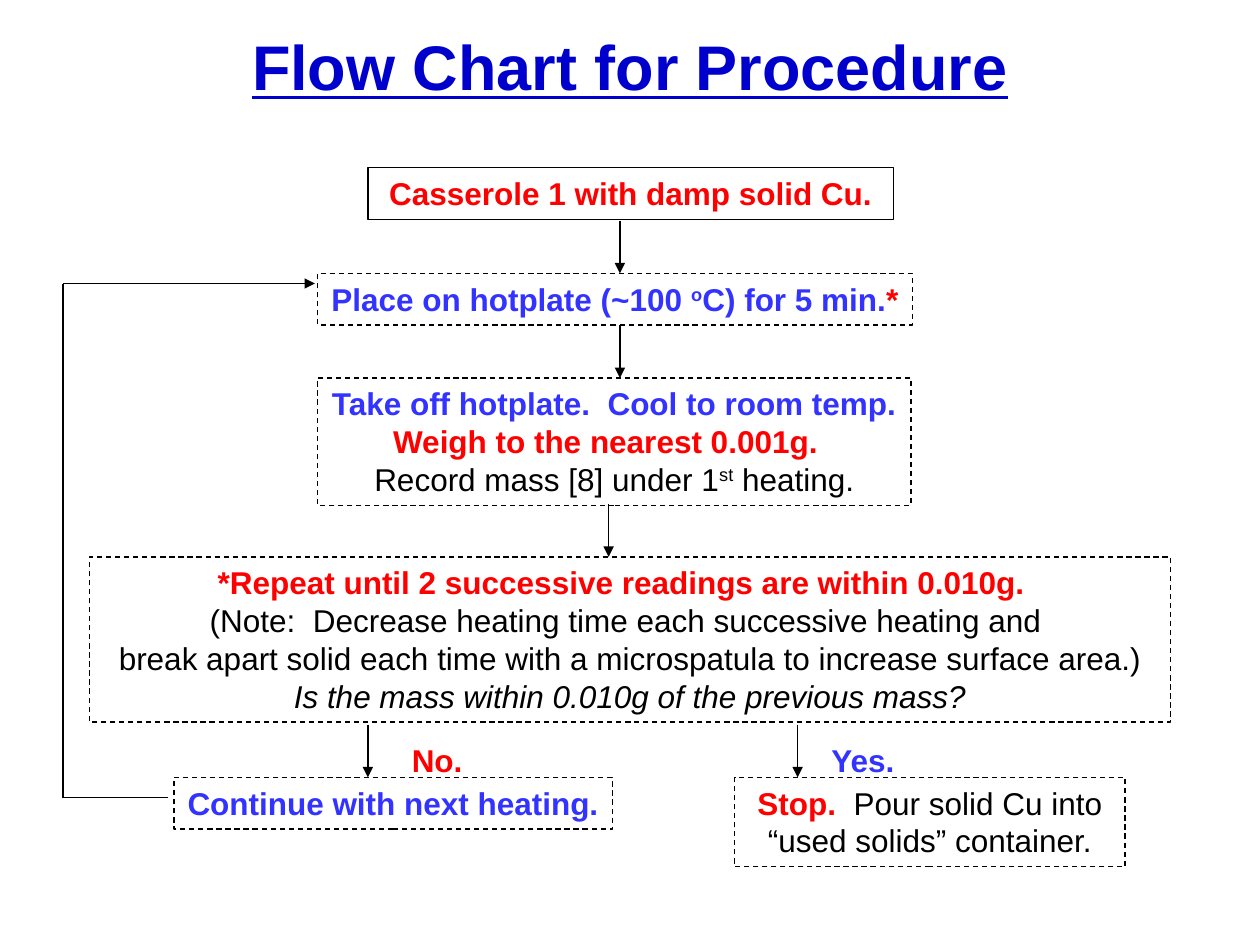
from lxml.etree import SubElement
from pptx import Presentation
from pptx.dml.color import RGBColor
from pptx.enum.dml import MSO_LINE
from pptx.enum.shapes import MSO_CONNECTOR, MSO_SHAPE
from pptx.enum.text import MSO_ANCHOR, MSO_AUTO_SIZE, PP_ALIGN
from pptx.oxml.ns import qn
from pptx.util import Inches, Pt

BLACK = RGBColor(0, 0, 0)
RED = RGBColor(0xFF, 0, 0)
BLUE = RGBColor(0x33, 0x33, 0xFF)
TITLE_BLUE = RGBColor(0, 0, 0xCC)


def add_run(paragraph, text, color=BLACK, size=18, bold=False, italic=False,
            underline=False, superscript=False):
    run = paragraph.add_run()
    run.text = text
    font = run.font
    font.name = "Arial"
    font.size = Pt(size)
    font.bold = bold
    font.italic = italic
    font.underline = underline
    font.color.rgb = color
    if superscript:
        run._r.get_or_add_rPr().set("baseline", "30000")


def plain(text, **style):
    return text, style


def strong(text, color, **style):
    return text, dict(color=color, bold=True, **style)


class FlowChart:
    line_width = Pt(0.75)
    line_color = BLACK

    def __init__(self, slide):
        self.slide = slide

    def fill_text(self, shape, paragraphs, alignment, wrap):
        frame = shape.text_frame
        frame.word_wrap = wrap
        frame.auto_size = MSO_AUTO_SIZE.SHAPE_TO_FIT_TEXT
        frame.vertical_anchor = MSO_ANCHOR.TOP
        for index, runs in enumerate(paragraphs):
            paragraph = frame.add_paragraph() if index else frame.paragraphs[0]
            paragraph.alignment = alignment
            for text, style in runs:
                add_run(paragraph, text, **style)

    def style_line(self, line):
        line.color.rgb = self.line_color
        line.width = self.line_width

    def box(self, left, top, width, height, *paragraphs, dashed=True, wrap=True):
        shape = self.slide.shapes.add_shape(
            MSO_SHAPE.RECTANGLE, Inches(left), Inches(top), Inches(width), Inches(height))
        shape.shadow.inherit = False
        shape.fill.background()
        self.style_line(shape.line)
        if dashed:
            shape.line.dash_style = MSO_LINE.DASH
        self.fill_text(shape, paragraphs, PP_ALIGN.CENTER, wrap)

    def label(self, left, top, width, height, run, alignment=PP_ALIGN.LEFT, wrap=True):
        shape = self.slide.shapes.add_textbox(
            Inches(left), Inches(top), Inches(width), Inches(height))
        self.fill_text(shape, [[run]], alignment, wrap)

    def line(self, start, end, arrow=False):
        connector = self.slide.shapes.add_connector(
            MSO_CONNECTOR.STRAIGHT, *map(Inches, start + end))
        self.style_line(connector.line)
        if arrow:
            SubElement(connector.line._get_or_add_ln(), qn("a:tailEnd"), type="triangle")
        SubElement(connector._element.spPr, qn("a:effectLst"))

    def down_arrow(self, x, top, length=0.42):
        self.line((x, top), (x, top + length), arrow=True)


def main():
    presentation = Presentation()
    presentation.slide_width = Inches(10)
    presentation.slide_height = Inches(7.5)
    chart = FlowChart(presentation.slides.add_slide(presentation.slide_layouts[6]))

    chart.label(1.69, 0.17, 6.62, 0.7,
                strong("Flow Chart for Procedure", TITLE_BLUE, size=36, underline=True),
                alignment=PP_ALIGN.CENTER)

    chart.box(2.92, 1.33, 4.17, 0.41,
              [strong("Casserole 1 with damp solid Cu.", RED)], dashed=False)
    chart.box(2.52, 2.17, 4.72, 0.41,
              [strong("Place on hotplate (~100 ", BLUE),
               strong("o", BLUE, superscript=True),
               strong("C) for 5 min.", BLUE),
               strong("*", RED)], wrap=False)
    chart.box(2.52, 3, 4.71, 1.01,
              [strong("Take off hotplate.  Cool to room temp.", BLUE)],
              [strong("Weigh to the nearest 0.001g.  ", RED)],
              [plain("Record mass [8] under 1"),
               plain("st", superscript=True),
               plain(" heating.")], wrap=False)
    chart.box(0.71, 4.42, 8.58, 1.31,
              [strong("*Repeat until 2 successive readings are within 0.010g.  ", RED)],
              [plain("(Note:  Decrease heating time each successive heating and ")],
              [plain("break apart solid each time with a microspatula to increase surface area.)")],
              [plain("Is the mass within 0.010g of the previous mass?", italic=True)])
    chart.box(1.38, 6.17, 3.48, 0.41,
              [strong("Continue with next heating.", BLUE)], wrap=False)
    chart.box(5.83, 6.17, 3.1, 0.71,
              [strong("Stop.", RED),
               plain("  Pour solid Cu into “used solids” container.")])

    chart.label(3.17, 5.83, 0.6, 0.4, strong("No.", RED), wrap=False)
    chart.label(6.5, 5.83, 0.75, 0.4, strong("Yes.", BLUE))

    for x, top in [(4.92, 1.75), (4.92, 2.58), (4.83, 4), (2.92, 5.75), (6.33, 5.75)]:
        chart.down_arrow(x, top)

    chart.line((1.33, 6.33), (0.5, 6.33))
    chart.line((0.5, 6.33), (0.5, 2.25))
    chart.line((0.5, 2.25), (2.5, 2.25), arrow=True)

    presentation.save("out.pptx")


if __name__ == "__main__":
    main()
